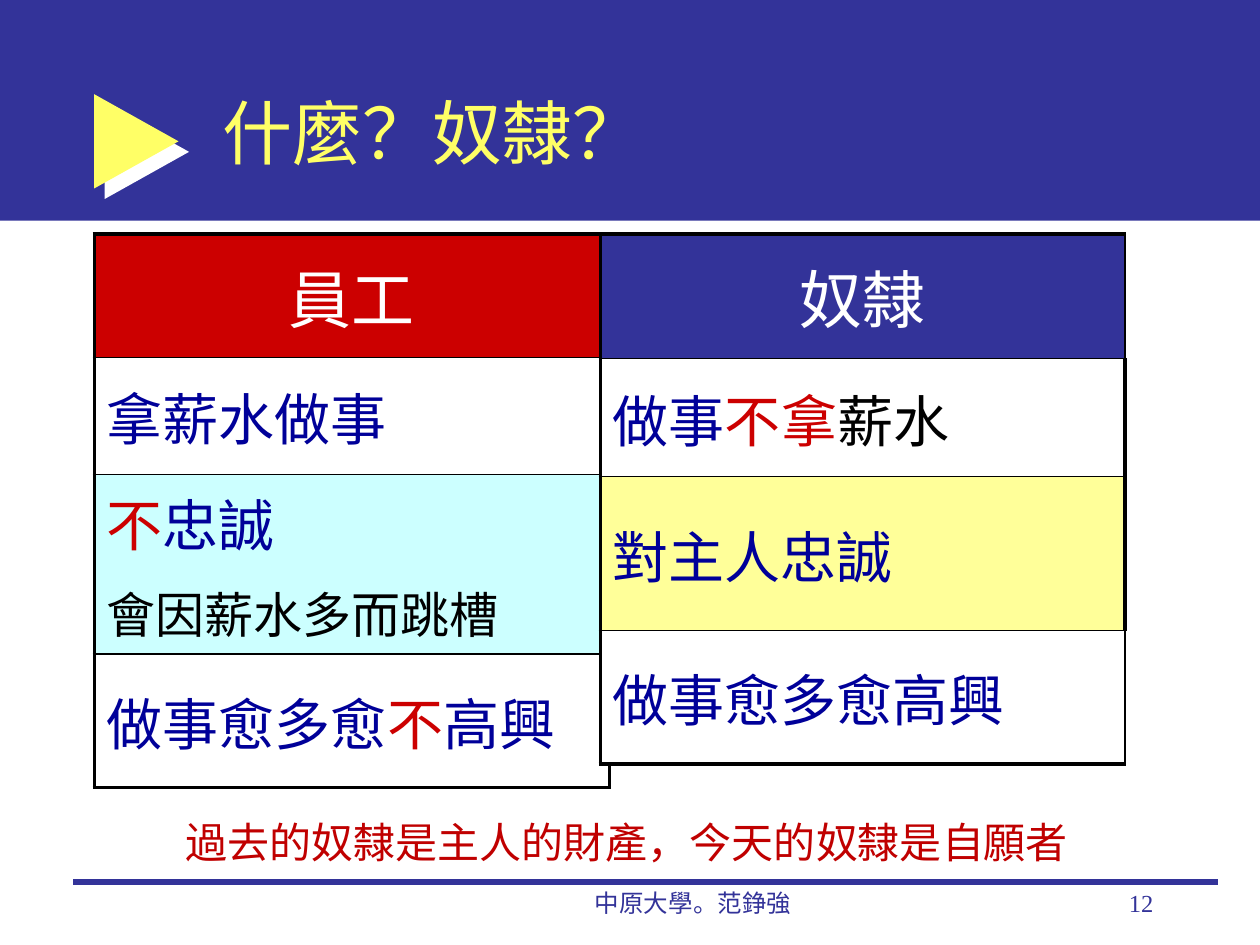
"""Build the slide that contrasts employees with slaves."""
import pptx
import pptx.util
import pptx.oxml
import pptx.dml.color
import pptx.enum.shapes
import pptx.enum.text
from lxml import etree
from pptx.util import Cm, Pt

NS = "http://schemas.openxmlformats.org/drawingml/2006/main"
ALIGN = pptx.enum.text.PP_ALIGN
ANCHOR = pptx.enum.text.MSO_ANCHOR
SERIF = "Times New Roman"
NAVY, RED, BLUE, BLACK, WHITE = "333399", "CC0000", "000099", "000000", "FFFFFF"
YELLOW = "FFFF66"
THICK, THIN = 2.25, 1


def rgb(value):
    """Turn a hex string into a colour."""
    return pptx.dml.color.RGBColor.from_string(value)


def style(paragraph, size, font, color=None, align=ALIGN.LEFT):
    """Set the alignment and font of a paragraph."""
    paragraph.alignment = align
    paragraph.font.size = Pt(size)
    paragraph.font.name = font
    if color:
        paragraph.font.color.rgb = rgb(color)


def add_filled(slide, preset, box, color):
    """Add a preset shape with a plain fill and no line."""
    shape = slide.shapes.add_shape(preset, *map(Cm, box))
    shape.shadow.inherit = False
    shape.fill.solid()
    shape.fill.fore_color.rgb = rgb(color)
    shape.line.fill.background()
    return shape


def add_hard_shadow(shape, color):
    """Give a shape a sharp shadow towards the lower right."""
    effects = shape.element.spPr.find(f"{{{NS}}}effectLst")
    effects.append(pptx.oxml.parse_xml(
        f'<a:outerShdw xmlns:a="{NS}" blurRad="0" dist="{Pt(8.5)}" dir="2700000" '
        f'algn="ctr" rotWithShape="0"><a:srgbClr val="{color}"/></a:outerShdw>'))


def add_rule(slide, left, right, top):
    """Add the horizontal line above the footer."""
    rule = slide.shapes.add_connector(
        pptx.enum.shapes.MSO_CONNECTOR.STRAIGHT, Cm(left), Cm(top), Cm(right), Cm(top))
    rule.line.color.rgb = rgb(NAVY)
    rule.line.width = Pt(3)
    etree.SubElement(rule.element.spPr, f"{{{NS}}}effectLst")


def add_text(slide, box, text, size, font, color, align=ALIGN.LEFT, wrap=True):
    """Add a text box with one paragraph."""
    frame = slide.shapes.add_textbox(*map(Cm, box)).text_frame
    frame.word_wrap = wrap
    if not wrap:
        frame.auto_size = pptx.enum.text.MSO_AUTO_SIZE.SHAPE_TO_FIT_TEXT
    frame.text = text
    style(frame.paragraphs[0], size, font, color, align)


def set_borders(cell, widths):
    """Draw black borders in the order left, right, top, bottom."""
    properties = cell._tc.get_or_add_tcPr()
    for side, width in zip("LRTB", widths):
        properties.append(pptx.oxml.parse_xml(
            f'<a:ln{side} xmlns:a="{NS}" w="{Pt(width)}"><a:solidFill>'
            f'<a:srgbClr val="{BLACK}"/></a:solidFill></a:ln{side}>'))


def fill_cell(cell, fill, lines, align):
    """Fill a cell and write its lines of coloured runs."""
    cell.vertical_anchor = ANCHOR.MIDDLE
    if fill:
        cell.fill.solid()
        cell.fill.fore_color.rgb = rgb(fill)
    else:
        cell.fill.background()
    for index, (size, runs) in enumerate(lines):
        frame = cell.text_frame
        paragraph = frame.add_paragraph() if index else frame.paragraphs[0]
        if index:
            paragraph.space_before = Pt(0.3 * size)
        colors = {color for _, color in runs}
        style(paragraph, size, SERIF, colors.pop() if len(colors) == 1 else None, align)
        for text, color in runs:
            run = paragraph.add_run()
            run.text = text
            if colors:
                run.font.color.rgb = rgb(color)


def add_column(slide, left, width, heights, cells, end_right):
    """Add a one-column table; end_right is the right border of the end rows."""
    table = slide.shapes.add_table(
        len(cells), 1, Cm(left), Cm(4.72), Cm(width), Cm(sum(heights))).table
    table.first_row = table.horz_banding = False
    last = len(cells) - 1
    for index, (height, (fill, lines)) in enumerate(zip(heights, cells)):
        table.rows[index].height = Cm(height)
        cell = table.cell(index, 0)
        set_borders(cell, (THICK,
                           end_right if index in (0, last) else THICK,
                           THIN if index else THICK,
                           THICK if index == last else THIN))
        fill_cell(cell, fill, lines, ALIGN.LEFT if index else ALIGN.CENTER)


def add_heading(slide, text):
    """Add the title band, its arrow and the title."""
    shapes = pptx.enum.shapes.MSO_SHAPE
    title = slide.shapes.title
    band = add_filled(slide, shapes.RECTANGLE, (0, 0, 25.4, 4.45), NAVY)
    arrow = add_filled(slide, shapes.RIGHT_ARROW, (1.9, 1.9, 1.7, 1.9), YELLOW)
    arrow.adjustments[0], arrow.adjustments[1] = 0.38, 1
    add_hard_shadow(arrow, WHITE)
    for backdrop in (band, arrow):
        title.element.addprevious(backdrop.element)
    title.left, title.top, title.width, title.height = map(Cm, (4.24, 1.07, 19.25, 3.18))
    frame = title.text_frame
    frame.text = text
    frame.auto_size = pptx.enum.text.MSO_AUTO_SIZE.NONE
    frame.vertical_anchor = ANCHOR.MIDDLE
    style(frame.paragraphs[0], 40, "Arial", YELLOW)


def main():
    """Build and save the slide."""
    deck = pptx.Presentation()
    deck.slide_width, deck.slide_height = Cm(25.4), Cm(19.05)
    slide = deck.slides.add_slide(deck.slide_layouts[5])
    add_heading(slide, "什麼？奴隸？")
    add_rule(slide, 1.48, 24.55, 17.78)

    employee = [
        (RED, [(36, [("員工", WHITE)])]),
        (None, [(32, [("拿薪水做事", BLUE)])]),
        ("CCFFFF", [(32, [("不", RED), ("忠誠", BLUE)]),
                    (28, [("會因薪水多而跳槽", BLACK)])]),
        (None, [(32, [("做事愈多愈", BLUE), ("不", RED), ("高興", BLUE)])]),
    ]
    slave = [
        (NAVY, [(36, [("奴隸", WHITE)])]),
        (WHITE, [(32, [("做事", BLUE), ("不拿", RED), ("薪水", BLACK)])]),
        ("FFFF99", [(32, [("對主人忠誠", BLUE)])]),
        (WHITE, [(32, [("做事愈多愈高興", BLUE)])]),
    ]
    add_column(slide, 1.9, 10.39, (2.49, 2.36, 3.15, 2.69), employee, THICK)
    add_column(slide, 12.1, 10.58, (2.51, 2.38, 3.1, 2.69), slave, THIN)

    add_text(slide, (9.95, 17.78, 8.05, 1.27), "中原大學。范錚強", 14, SERIF, NAVY, ALIGN.CENTER)
    add_text(slide, (18.2, 17.78, 5.3, 1.27), "12", 14, SERIF, NAVY, ALIGN.RIGHT)
    add_text(slide, (3.5, 16.33, 18.47, 1.3), "過去的奴隸是主人的財產，今天的奴隸是自願者",
             24, "Noto Sans CJK SC", "C00000", wrap=False)
    deck.save("out.pptx")


if __name__ == "__main__":
    main()
